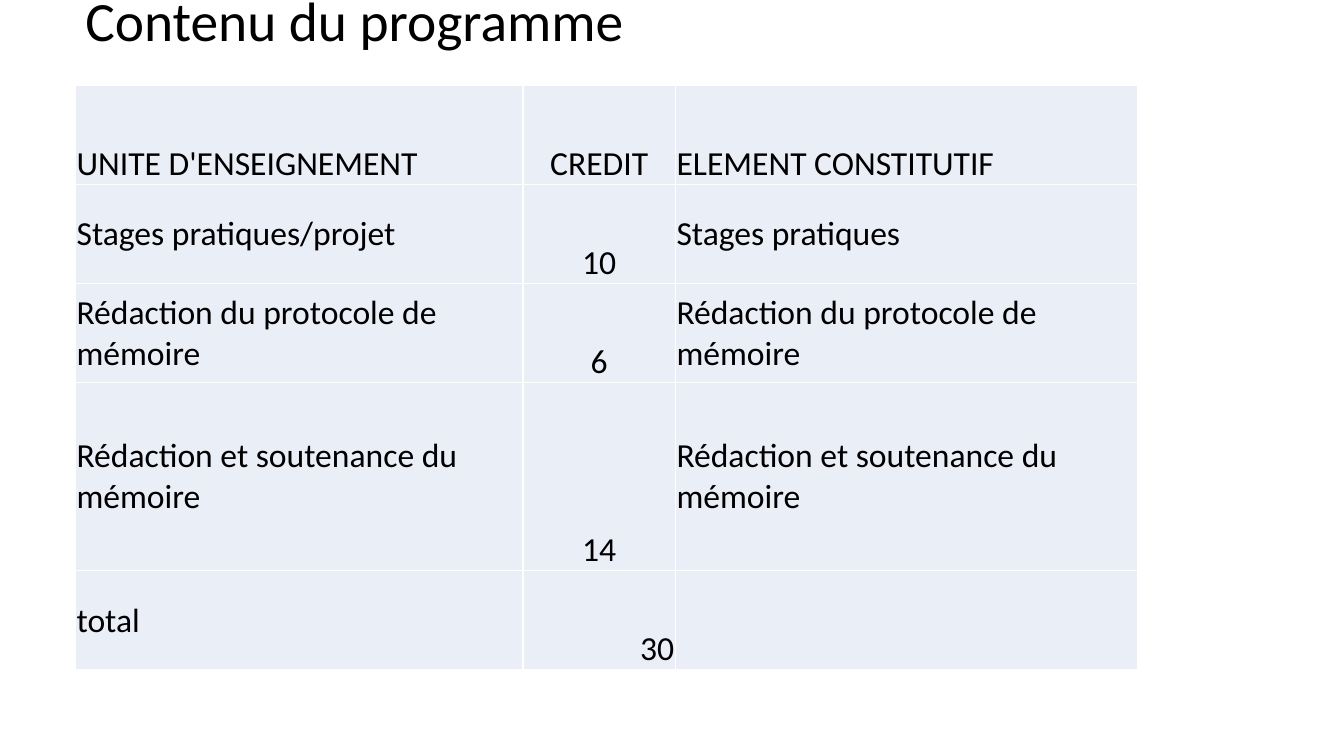
from lxml import etree
from pptx import Presentation
from pptx.dml.color import RGBColor
from pptx.enum.text import MSO_ANCHOR, MSO_AUTO_SIZE, PP_ALIGN
from pptx.oxml.ns import qn
from pptx.util import Cm, Pt

LEFT, CENTER, RIGHT = PP_ALIGN.LEFT, PP_ALIGN.CENTER, PP_ALIGN.RIGHT
MIDDLE, BOTTOM = MSO_ANCHOR.MIDDLE, MSO_ANCHOR.BOTTOM
NO_AUTOFIT = MSO_AUTO_SIZE.NONE

BLACK = RGBColor(0x00, 0x00, 0x00)
WHITE = RGBColor(0xFF, 0xFF, 0xFF)
PALE_BLUE = RGBColor(0xEA, 0xEF, 0xF7)

PROGRAMME = [
    ("UNITE D'ENSEIGNEMENT", "CREDIT", "ELEMENT CONSTITUTIF"),
    ("Stages pratiques/projet", "10", "Stages pratiques"),
    ("Rédaction du protocole de mémoire", "6", "Rédaction du protocole de mémoire"),
    ("Rédaction et soutenance du mémoire", "14", "Rédaction et soutenance du mémoire"),
    ("total", "30", ""),
]
COLUMN_WIDTHS = (11.28, 3.84, 11.66)
ROW_HEIGHTS = (2.49, 2.49, 2.49, 4.75, 2.49)
CREDIT_COLUMN = 1


class ProgrammeSlide:
    """Holds the style and the current slide."""

    font_name = "Calibri"
    title_size = Pt(39.6)
    cell_size = Pt(24)
    cell_inset = Cm(0.03)
    border_width = Pt(1)

    def __init__(self, deck):
        self.slide = deck.slides.add_slide(deck.slide_layouts[6])

    def styled_text(self, frame, text, size, align=LEFT):
        paragraph = frame.paragraphs[0]
        paragraph.text = text
        paragraph.alignment = align
        for run in paragraph.runs:
            run.font.name = self.font_name
            run.font.size = size
            run.font.color.rgb = BLACK
        return paragraph

    def title(self, text, left, top, width, height):
        box = self.slide.shapes.add_textbox(Cm(left), Cm(top), Cm(width), Cm(height))
        frame = box.text_frame
        frame.word_wrap = True
        frame.auto_size = NO_AUTOFIT
        frame.vertical_anchor = MIDDLE
        self.styled_text(frame, text, self.title_size).line_spacing = 0.9

    def borders(self, cell):
        properties = cell._tc.get_or_add_tcPr()
        for side in ("a:lnL", "a:lnR", "a:lnT", "a:lnB"):
            line = etree.SubElement(properties, qn(side), w=str(self.border_width))
            fill = etree.SubElement(line, qn("a:solidFill"))
            etree.SubElement(fill, qn("a:srgbClr"), val=str(WHITE))

    def cell(self, cell, text, align, anchor):
        self.borders(cell)
        cell.fill.solid()
        cell.fill.fore_color.rgb = PALE_BLUE
        cell.margin_left = cell.margin_right = cell.margin_top = self.cell_inset
        cell.margin_bottom = 0
        cell.vertical_anchor = anchor
        self.styled_text(cell.text_frame, text, self.cell_size, align)

    def table(self, rows, left, top, widths, heights):
        table = self.slide.shapes.add_table(
            len(rows), len(widths), Cm(left), Cm(top), Cm(sum(widths)), Cm(sum(heights))
        ).table
        table.first_row = table.horz_banding = False
        for column, width in zip(table.columns, widths):
            column.width = Cm(width)
        for row, height in zip(table.rows, heights):
            row.height = Cm(height)

        # Credits and headings sit at the bottom; the total is right-aligned
        last_row = len(rows) - 1
        for r, texts in enumerate(rows):
            for c, text in enumerate(texts):
                is_credit = c == CREDIT_COLUMN
                anchor = BOTTOM if r == 0 or is_credit else MIDDLE
                align = LEFT
                if is_credit:
                    align = RIGHT if r == last_row else CENTER
                self.cell(table.cell(r, c), text, align, anchor)


def main():
    deck = Presentation()
    deck.slide_width, deck.slide_height = Cm(33.87), Cm(19.05)
    programme = ProgrammeSlide(deck)

    # Heading
    programme.title("Contenu du programme", 1.9, 0.33, 28.88, 0.51)

    # Teaching units and credits
    programme.table(PROGRAMME, 1.9, 2.16, COLUMN_WIDTHS, ROW_HEIGHTS)

    deck.save("out.pptx")


if __name__ == "__main__":
    main()
